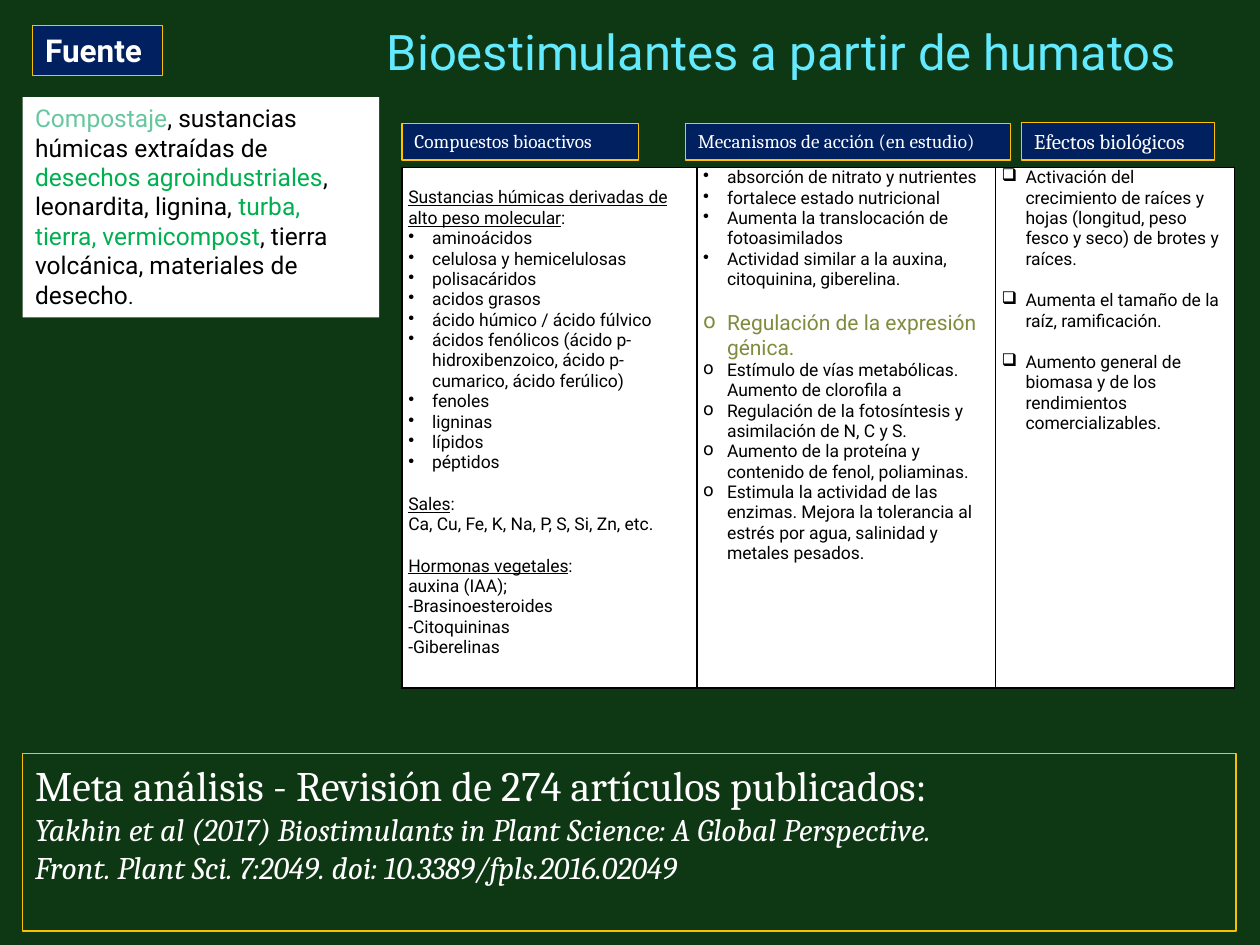
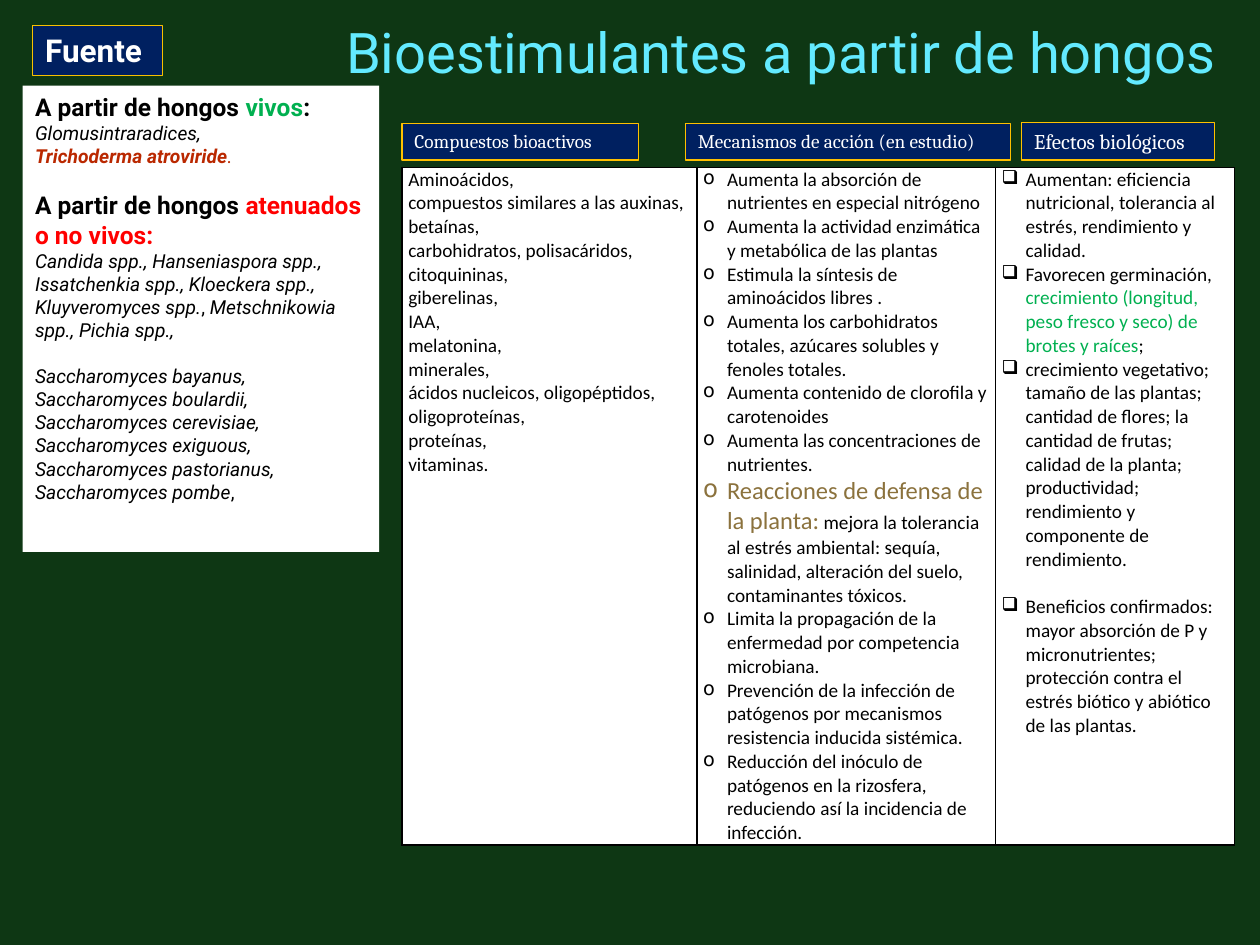
"""Build two slides on biostimulants derived from humates and from fungi."""
from dataclasses import dataclass
from typing import Optional

from lxml.etree import SubElement
from pptx import Presentation
from pptx.dml.color import RGBColor
from pptx.enum.shapes import MSO_SHAPE as Shape
from pptx.enum.text import MSO_ANCHOR as Anchor
from pptx.enum.text import MSO_AUTO_SIZE as AutoSize
from pptx.enum.text import PP_ALIGN as Align
from pptx.oxml.ns import qn
from pptx.util import Inches, Pt

DARK_GREEN = RGBColor(0x0E, 0x37, 0x14)
NAVY = RGBColor(0x00, 0x20, 0x60)
GOLD = RGBColor(0xFF, 0xC0, 0x00)
AMBER = RGBColor(0xF8, 0xC0, 0x00)
CYAN = RGBColor(0x63, 0xEA, 0xFF)
WHITE = RGBColor(0xFF, 0xFF, 0xFF)
BLACK = RGBColor(0x00, 0x00, 0x00)
GREEN = RGBColor(0x00, 0xB0, 0x50)
MINT = RGBColor(0x67, 0xC7, 0x9C)
OLIVE = RGBColor(0x81, 0x8B, 0x3D)
BROWN = RGBColor(0x8B, 0x72, 0x3D)
RUST = RGBColor(0xBA, 0x28, 0x00)
RED = RGBColor(0xFF, 0x00, 0x00)

ROBOTO, CAMBRIA, CALIBRI = "Roboto", "Cambria", "Calibri"
DOT, CIRCLE, CHECKBOX = "•", "o", "❑"
INDENT = Inches(0.19)
COLUMN_WIDTHS = (2.34, 2.37, 1.9)


@dataclass
class Span:
    """A stretch of text; an unset size, font or colour follows its block."""
    text: str
    size: Optional[float] = None
    font: Optional[str] = None
    color: Optional[RGBColor] = None
    bold: bool = False
    italic: bool = False
    underline: bool = False


@dataclass
class Para:
    """A paragraph with an optional bullet and space before, in points."""
    spans: list[Span]
    bullet: str = ""
    gap: float = 0


@dataclass
class Box:
    """A rectangle holding text, with position and size in inches."""
    left: float
    top: float
    width: float
    height: float
    paras: list[Para]
    size: float
    font: str
    color: RGBColor = WHITE
    fill: Optional[RGBColor] = NAVY
    line: Optional[RGBColor] = GOLD
    wrap: bool = False


@dataclass
class Topic:
    """What changes from one slide to the next."""
    title: str
    title_size: float
    sources: Box
    columns: list[list[Para]]
    size: float
    font: str
    row_height: float
    top_margin: float = 0


def lines(*texts: str, bullet: str = "", gap: float = 0) -> list[Para]:
    """Make plain paragraphs, with the same space before all but the first."""
    return [Para([Span(t)], bullet, gap if i else 0) for i, t in enumerate(texts)]


def label(text: str, gap: float = 0) -> Para:
    """Make an underlined label followed by a colon."""
    return Para([Span(text, underline=True), Span(":")], gap=gap)


def write(p, text: str, *, size: float, font: str, color: RGBColor,
          bold: bool = False, italic: bool = False, underline: bool = False) -> None:
    """Add a formatted run to a paragraph."""
    r = p.add_run()
    r.text = text
    f = r.font
    f.size, f.name, f.color.rgb = Pt(size), font, color
    f.bold, f.italic, f.underline = bold, italic, underline


def set_bullet(p, char: str) -> None:
    """Give a paragraph a bullet with a hanging indent."""
    pPr = p._p.get_or_add_pPr()
    pPr.set("marL", str(INDENT))
    pPr.set("indent", str(-INDENT))
    SubElement(pPr, qn("a:buChar")).set("char", char)


def fill_text(tf, paras: list[Para], size: float, font: str, color: RGBColor) -> None:
    """Write paragraphs into a text frame."""
    for i, para in enumerate(paras):
        p = tf.add_paragraph() if i else tf.paragraphs[0]
        p.alignment = Align.LEFT
        if para.gap:
            p.space_before = Pt(para.gap)
        if para.bullet:
            set_bullet(p, para.bullet)
        for s in para.spans:
            write(p, s.text, size=s.size or size, font=s.font or font,
                  color=s.color or color, bold=s.bold, italic=s.italic,
                  underline=s.underline)


def add_box(slide, box: Box) -> None:
    """Draw a rectangle with its text."""
    sp = slide.shapes.add_shape(Shape.RECTANGLE, Inches(box.left), Inches(box.top),
                                Inches(box.width), Inches(box.height))
    sp.shadow.inherit = False
    if box.fill is None:
        sp.fill.background()
    else:
        sp.fill.solid()
        sp.fill.fore_color.rgb = box.fill
    if box.line is None:
        sp.line.fill.background()
    else:
        sp.line.color.rgb = box.line
        sp.line.width = Pt(0.75)
    tf = sp.text_frame
    tf.word_wrap = box.wrap
    tf.vertical_anchor = Anchor.TOP
    fill_text(tf, box.paras, box.size, box.font, box.color)


def set_borders(cell) -> None:
    """Outline a table cell with a one-point black line."""
    tcPr = cell._tc.get_or_add_tcPr()
    for i, side in enumerate(("lnL", "lnR", "lnT", "lnB")):
        ln = tcPr.makeelement(qn(f"a:{side}"), {"w": str(Pt(1))})
        SubElement(SubElement(ln, qn("a:solidFill")), qn("a:srgbClr")).set("val", str(BLACK))
        tcPr.insert(i, ln)


def add_findings(slide, topic: Topic) -> None:
    """Draw the three-column table of a topic."""
    frame = slide.shapes.add_table(1, 3, Inches(3.19), Inches(1.33),
                                   Inches(sum(COLUMN_WIDTHS)), Inches(topic.row_height))
    table = frame.table
    table.first_row = table.horz_banding = False
    for i, (width, paras) in enumerate(zip(COLUMN_WIDTHS, topic.columns)):
        table.columns[i].width = Inches(width)
        cell = table.cell(0, i)
        cell.margin_left = cell.margin_right = Inches(0.05)
        cell.margin_top = Inches(0 if i else topic.top_margin)
        cell.margin_bottom = 0
        cell.fill.solid()
        cell.fill.fore_color.rgb = WHITE
        set_borders(cell)
        fill_text(cell.text_frame, paras, topic.size, topic.font, BLACK)


def set_title(slide, text: str, size: float) -> None:
    """Place and format the slide title."""
    title = slide.shapes.title
    title.left, title.top = Inches(2.59), Inches(0.09)
    title.width, title.height = Inches(7.22), Inches(0.63)
    tf = title.text_frame
    tf.auto_size = AutoSize.NONE
    tf.word_wrap = True
    tf.vertical_anchor = Anchor.MIDDLE
    p = tf.paragraphs[0]
    p.alignment = Align.CENTER
    write(p, text, size=size, font=ROBOTO, color=CYAN)


def source_box(top: float, height: float, paras: list[Para], size: float) -> Box:
    """Describe the white box that lists the sources."""
    return Box(0.18, top, 2.83, height, paras, size, ROBOTO, BLACK, WHITE, None, True)


HEADINGS = [
    Box(3.19, 0.98, 1.88, 0.29, lines("Compuestos bioactivos"), 11, CAMBRIA, wrap=True),
    Box(5.44, 0.98, 2.58, 0.29, lines("Mecanismos de acción (en estudio)"), 11, CAMBRIA),
    Box(8.11, 0.97, 1.53, 0.3, lines("Efectos biológicos"), 12, CAMBRIA),
    Box(0.26, 0.2, 1.03, 0.4, [Para([Span("Fuente", bold=True)])], 18, ROBOTO, line=AMBER),
]

REVIEW = Box(0.18, 5.98, 9.63, 1.41, [
    Para([Span("Meta análisis - Revisión de 274 artículos publicados:", 24)]),
    Para([Span("Yakhin et al (2017) Biostimulants in Plant Science: A Global Perspective.",
               italic=True)]),
    Para([Span("Front. Plant Sci. 7:2049. doi: 10.3389/fpls.2016.02049", italic=True)]),
], 18, CAMBRIA, fill=None, line=AMBER, wrap=True)

HUMATES = Topic(
    "Bioestimulantes a partir de humatos", 28,
    source_box(0.77, 1.75, [Para([
        Span("Compostaje", color=MINT), Span(", sustancias húmicas extraídas de "),
        Span("desechos agroindustriales", color=GREEN), Span(", leonardita, lignina, "),
        Span("turba, tierra, vermicompost", color=GREEN),
        Span(", tierra volcánica, materiales de desecho"), Span(".", 12)])], 14),
    [
        [label("Sustancias húmicas derivadas de alto peso molecular"),
         *lines("aminoácidos", "celulosa y hemicelulosas", "polisacáridos", "acidos grasos",
                "ácido húmico / ácido fúlvico",
                "ácidos fenólicos (ácido p-hidroxibenzoico, ácido p-cumarico, ácido ferúlico)",
                "fenoles", "ligninas", "lípidos", "péptidos", bullet=DOT),
         label("Sales", 12), *lines("Ca, Cu, Fe, K, Na, P, S, Si, Zn, etc."),
         label("Hormonas vegetales", 12),
         *lines("auxina (IAA);", "-Brasinoesteroides", "-Citoquininas", "-Giberelinas")],
        [*lines("absorción de nitrato y nutrientes", "fortalece estado nutricional",
                "Aumenta la translocación de fotoasimilados",
                "Actividad similar a la auxina, citoquinina, giberelina.", bullet=DOT),
         Para([Span("Regulación de la expresión génica.", 12, color=OLIVE)], CIRCLE, 12),
         *lines("Estímulo de vías metabólicas. Aumento de clorofila a",
                "Regulación de la fotosíntesis y asimilación de N, C y S.",
                "Aumento de la proteína y contenido de fenol, poliaminas.",
                "Estimula la actividad de las enzimas. Mejora la tolerancia al estrés "
                "por agua, salinidad y metales pesados.", bullet=CIRCLE)],
        lines("Activación del crecimiento de raíces y hojas (longitud, peso fesco y seco) "
              "de brotes y raíces.",
              "Aumenta el tamaño de la raíz, ramificación.",
              "Aumento general de biomasa y de los rendimientos comercializables.",
              bullet=CHECKBOX, gap=12),
    ], 10, ROBOTO, 4.13, 0.16)

FUNGI = Topic(
    "Bioestimulantes a partir de hongos", 32,
    source_box(0.68, 3.7, [
        Para([Span("A partir de hongos ", 14, bold=True),
              Span("vivos", 14, color=GREEN, bold=True), Span(": ", 14, bold=True),
              Span("Glomusintraradices,", italic=True)]),
        Para([Span("Trichoderma atroviride", color=RUST, bold=True, italic=True),
              Span(".", color=RUST, italic=True)]),
        Para([Span("A partir de hongos ", 14, bold=True),
              Span("atenuados o no vivos:", 14, color=RED, bold=True)], gap=13),
        Para([Span("Candida spp., Hanseniaspora spp., Issatchenkia spp., Kloeckera spp., "
                   "Kluyveromyces spp.", italic=True), Span(", "),
              Span("Metschnikowia spp., Pichia spp.,", italic=True)]),
        Para([Span("Saccharomyces bayanus, Saccharomyces boulardii, "
                   "Saccharomyces cerevisiae, Saccharomyces exiguous, "
                   "Saccharomyces pastorianus, Saccharomyces pombe", italic=True),
              Span(",")], gap=13)], 11),
    [
        lines("Aminoácidos,", "compuestos similares a las auxinas,", "betaínas,",
              "carbohidratos, polisacáridos, citoquininas,", "giberelinas,", "IAA,",
              "melatonina,", "minerales,",
              "ácidos nucleicos, oligopéptidos, oligoproteínas,", "proteínas,", "vitaminas."),
        [*lines("Aumenta la absorción de nutrientes en especial nitrógeno",
                "Aumenta la actividad enzimática y metabólica de las plantas",
                "Estimula la síntesis de aminoácidos libres .",
                "Aumenta los carbohidratos totales, azúcares solubles y fenoles totales.",
                "Aumenta contenido de clorofila y carotenoides",
                "Aumenta las concentraciones de nutrientes.", bullet=CIRCLE),
         Para([Span("Reacciones de defensa de la planta:", 14, color=BROWN),
               Span(" mejora la tolerancia al estrés ambiental: sequía, salinidad, "
                    "alteración del suelo, contaminantes tóxicos.")], CIRCLE),
         *lines("Limita la propagación de la enfermedad por competencia microbiana.",
                "Prevención de la infección de patógenos por mecanismos resistencia "
                "inducida sistémica.",
                "Reducción del inóculo de patógenos en la rizosfera, reduciendo así la "
                "incidencia de infección.", bullet=CIRCLE)],
        [*lines("Aumentan: eficiencia nutricional, tolerancia al estrés, rendimiento y calidad.",
                bullet=CHECKBOX),
         Para([Span("Favorecen germinación, "),
               Span("crecimiento (longitud, peso fresco y seco) de brotes y raíces",
                    color=GREEN), Span(";")], CHECKBOX),
         *lines("crecimiento vegetativo; tamaño de las plantas; cantidad de flores; la "
                "cantidad de frutas; calidad de la planta; productividad; rendimiento y "
                "componente de rendimiento.",
                "Beneficios confirmados: mayor absorción de P y micronutrientes; protección "
                "contra el estrés biótico y abiótico de las plantas.",
                bullet=CHECKBOX, gap=13.5)],
    ], 11, CALIBRI, 5.28)


def add_topic(prs, topic: Topic):
    """Add one slide with its table, title, headings and sources."""
    slide = prs.slides.add_slide(prs.slide_layouts[5])
    set_title(slide, topic.title, topic.title_size)
    add_findings(slide, topic)
    for box in (*HEADINGS, topic.sources):
        add_box(slide, box)
    return slide


def main() -> None:
    """Build and save the presentation."""
    prs = Presentation()
    prs.slide_width, prs.slide_height = Inches(10), Inches(7.5)
    background = prs.slide_master.background.fill
    background.solid()
    background.fore_color.rgb = DARK_GREEN
    add_box(add_topic(prs, HUMATES), REVIEW)
    add_topic(prs, FUNGI)
    prs.save("out.pptx")


if __name__ == "__main__":
    main()
